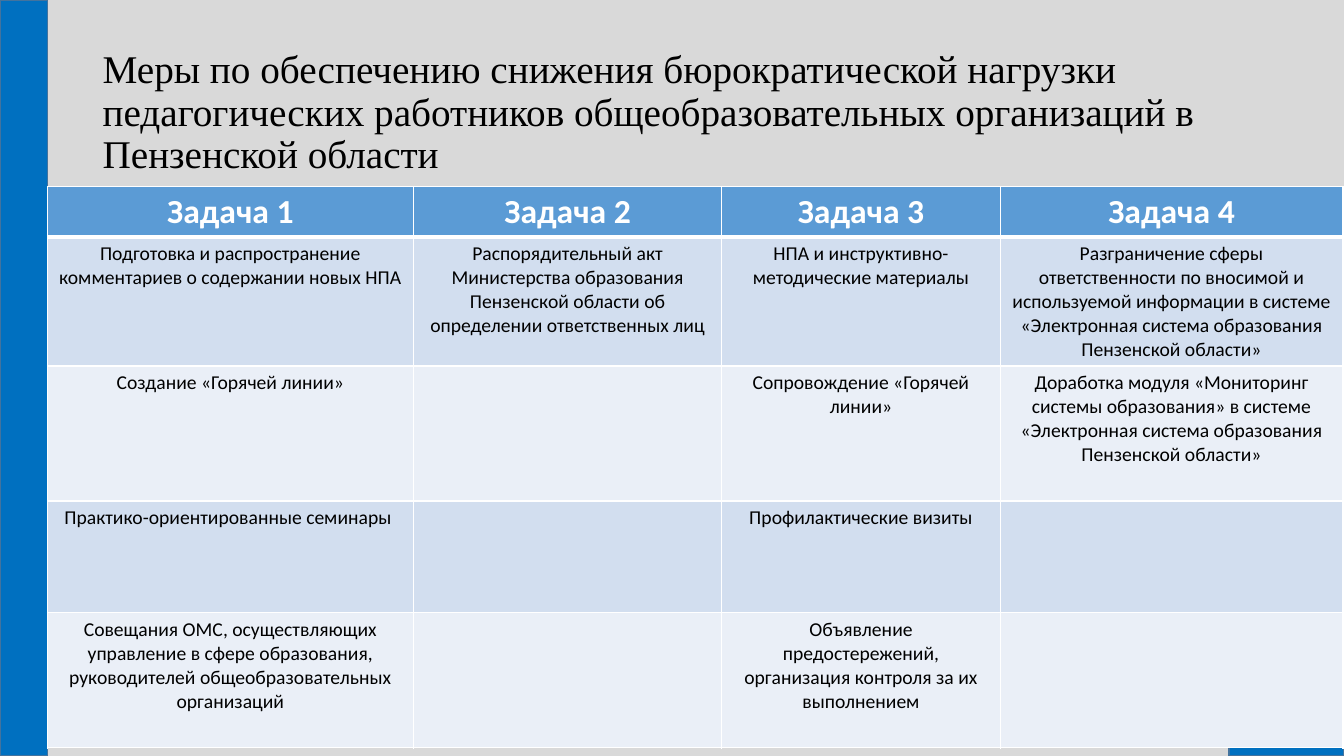
from pptx import Presentation
from pptx.dml.color import RGBColor
from pptx.enum.shapes import MSO_SHAPE
from pptx.enum.text import MSO_ANCHOR, PP_ALIGN
from pptx.oxml import parse_xml
from pptx.oxml.ns import nsdecls
from pptx.util import Inches, Pt


def color(value):
    return RGBColor.from_string(value)


def add_border(cell, side, width):
    cell._tc.get_or_add_tcPr().append(parse_xml(
        f'<a:ln{side} {nsdecls("a")} w="{Pt(width)}"><a:solidFill>'
        f'<a:srgbClr val="FFFFFF"/></a:solidFill></a:ln{side}>'))


presentation = Presentation()
presentation.slide_width = Inches(13.33)
presentation.slide_height = Inches(7.5)
slide = presentation.slides.add_slide(presentation.slide_layouts[6])
slide.background.fill.solid()
slide.background.fill.fore_color.rgb = color("D9D9D9")

# Blue corner block and left band
for left, top, width, height in [(12.19, 6.49, 1.14, 1.01), (0, 0, 0.47, 7.5)]:
    shape = slide.shapes.add_shape(MSO_SHAPE.RECTANGLE, Inches(left), Inches(top),
                                   Inches(width), Inches(height))
    shape.shadow.inherit = False
    shape.fill.solid()
    shape.fill.fore_color.rgb = color("0070C0")
    shape.line.color.rgb = color("43739E")
    shape.line.width = Pt(1)

# Title
title = slide.shapes.add_textbox(Inches(0.92), Inches(0.4), Inches(11.5), Inches(1.45))
title.text_frame.word_wrap = True
title.text_frame.vertical_anchor = MSO_ANCHOR.MIDDLE
paragraph = title.text_frame.paragraphs[0]
paragraph.text = ("Меры по обеспечению снижения бюрократической нагрузки педагогических "
                  "работников общеобразовательных организаций в Пензенской области")
paragraph.line_spacing = 0.9
paragraph.font.name = "Times New Roman"
paragraph.font.size = Pt(28)
paragraph.font.color.rgb = color("000000")

# Table of measures by task
rows = [
    ["Задача 1", "Задача 2", "Задача 3", "Задача 4"],
    ["Подготовка и распространение комментариев о содержании новых НПА",
     "Распорядительный акт Министерства образования Пензенской области "
     "об определении ответственных лиц",
     "НПА и инструктивно-методические материалы",
     "Разграничение сферы ответственности по вносимой и используемой информации "
     "в системе «Электронная система образования Пензенской области»"],
    ["Создание «Горячей линии»", "", "Сопровождение «Горячей линии»",
     "Доработка модуля «Мониторинг системы образования» в системе "
     "«Электронная система образования Пензенской области»"],
    ["Практико-ориентированные семинары ", "", "Профилактические визиты", ""],
    ["Совещания ОМС, осуществляющих управление в сфере образования, "
     "руководителей общеобразовательных организаций", "",
     "Объявление предостережений, организация контроля за их выполнением", ""],
]
column_widths = [3.63, 3.06, 2.76, 3.4]
row_heights = [0.5, 1.28, 1.34, 1.11, 1.34]
table = slide.shapes.add_table(len(rows), len(column_widths), Inches(0.47), Inches(1.85),
                               Inches(sum(column_widths)), Inches(sum(row_heights))).table
for column, width in zip(table.columns, column_widths):
    column.width = Inches(width)
for row, height in zip(table.rows, row_heights):
    row.height = Inches(height)

for row_index, texts in enumerate(rows):
    header = row_index == 0
    band = "D2DEEF" if row_index % 2 else "EAEFF7"
    for column_index, text in enumerate(texts):
        cell = table.cell(row_index, column_index)
        for side in "LRTB":
            thick = (header and side == "B") or (row_index == 1 and side == "T")
            add_border(cell, side, 3 if thick else 1)
        cell.fill.solid()
        cell.fill.fore_color.rgb = color("5B9BD5" if header else band)
        paragraph = cell.text_frame.paragraphs[0]
        paragraph.text = text
        paragraph.alignment = PP_ALIGN.CENTER
        for run in paragraph.runs:
            run.font.name = "Calibri"
            run.font.size = Pt(24 if header else 14)
            run.font.bold = header
            run.font.color.rgb = color("FFFFFF" if header else "000000")

presentation.save("out.pptx")
